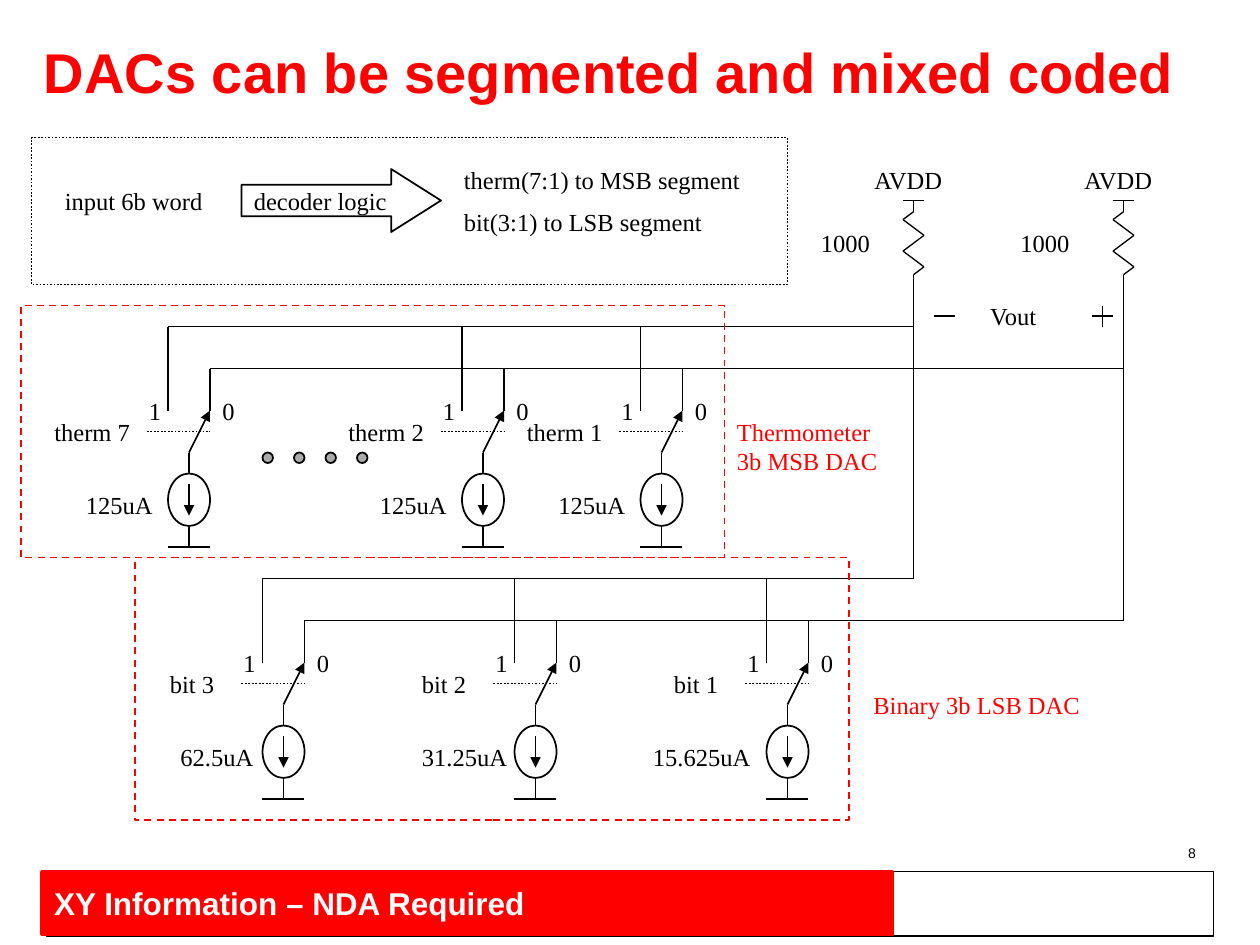
from itertools import pairwise

from lxml import etree
from pptx import Presentation
from pptx.dml.color import RGBColor
from pptx.enum.dml import MSO_LINE
from pptx.enum.shapes import MSO_CONNECTOR, MSO_SHAPE
from pptx.enum.text import MSO_ANCHOR, MSO_AUTO_SIZE, PP_ALIGN
from pptx.oxml.ns import qn
from pptx.util import Pt

STRAIGHT = MSO_CONNECTOR.STRAIGHT
RECT, OVAL, RIGHT_ARROW = MSO_SHAPE.RECTANGLE, MSO_SHAPE.OVAL, MSO_SHAPE.RIGHT_ARROW
LEFT, CENTER, RIGHT = PP_ALIGN.LEFT, PP_ALIGN.CENTER, PP_ALIGN.RIGHT
TOP, MIDDLE = MSO_ANCHOR.TOP, MSO_ANCHOR.MIDDLE
GROW, FIXED = MSO_AUTO_SIZE.SHAPE_TO_FIT_TEXT, MSO_AUTO_SIZE.NONE
DOTTED, DASHED = MSO_LINE.ROUND_DOT, MSO_LINE.DASH
BLACK = RGBColor(0, 0, 0)
WHITE = RGBColor(255, 255, 255)
RED = RGBColor(255, 0, 0)
GRAY = RGBColor(170, 170, 170)
SERIF, SANS = "Times New Roman", "Arial"

MINUS_RAIL, PLUS_RAIL = 522, 642
MSB_TOP, LSB_TOP = 186.6, 330.6
SUPPLY_TOP = 114.6


class Schematic:
    def __init__(self, slide):
        self.slide = slide

    def fill_text(self, frame, text, size, font, color, bold=False, align=LEFT):
        frame.word_wrap = True
        paragraph = frame.paragraphs[0]
        paragraph.alignment = align
        run = paragraph.add_run()
        run.text = text
        run.font.size = Pt(size)
        run.font.name = font
        run.font.bold = bold
        run.font.color.rgb = color
        return paragraph

    def text(self, left, top, width, height, text, size, font, color,
             bold=False, align=LEFT, anchor=TOP, fit=FIXED):
        box = self.slide.shapes.add_textbox(Pt(left), Pt(top), Pt(width), Pt(height))
        box.text_frame.auto_size = fit
        box.text_frame.vertical_anchor = anchor
        return self.fill_text(box.text_frame, text, size, font, color, bold, align)

    def label(self, left, top, width, text, color=BLACK, align=LEFT, height=24):
        self.text(left, top, width, height, text, 14, SERIF, color, align=align, fit=GROW)

    def shape(self, kind, left, top, width, height, fill=None, color=BLACK, weight=1, dash=None):
        shape = self.slide.shapes.add_shape(kind, Pt(left), Pt(top), Pt(width), Pt(height))
        shape.shadow.inherit = False
        if fill is None:
            shape.fill.background()
        else:
            shape.fill.solid()
            shape.fill.fore_color.rgb = fill
        shape.line.color.rgb = color
        shape.line.width = Pt(weight)
        if dash:
            shape.line.dash_style = dash
        return shape

    def wire(self, x1, y1, x2, y2, weight=1, dash=None, arrow=False):
        wire = self.slide.shapes.add_connector(STRAIGHT, Pt(x1), Pt(y1), Pt(x2), Pt(y2))
        wire.line.color.rgb = BLACK
        wire.line.width = Pt(weight)
        if dash:
            wire.line.dash_style = dash
        properties = wire.element.spPr
        if arrow:
            etree.SubElement(properties.find(qn("a:ln")), qn("a:tailEnd"), type="triangle")
        etree.SubElement(properties, qn("a:effectLst"))

    def buses(self, first_cell, top):
        self.wire(first_cell - 12, top, MINUS_RAIL, top)
        self.wire(first_cell + 12, top + 24, PLUS_RAIL, top + 24)

    def cell(self, x, top, name, name_offset, name_width, current, current_offset, current_width):
        contact, pivot, source, ground = top + 48, top + 72, top + 84, top + 126
        self.shape(OVAL, x - 12, source, 24, 30, WHITE)
        self.wire(x, source + 6, x, source + 24, arrow=True)
        self.wire(x, source + 30, x, ground)
        self.wire(x, pivot, x, source)
        self.wire(x, pivot, x + 12, contact, arrow=True)
        self.wire(x + 12, contact, x + 12, top + 24)
        self.wire(x - 12, contact, x - 12, top)
        self.wire(x - 12, ground, x + 12, ground)
        self.wire(x - 24, contact + 12, x + 12, contact + 12, dash=DOTTED)
        self.label(x - name_offset, contact, name_width, name)
        self.label(x - 30, top + 36, 42, "1")
        self.label(x + 12, top + 36, 42, "0")
        self.label(x - current_offset, top + 90, current_width, current)

    def supply(self, x, rail_end, value_left):
        resistor = SUPPLY_TOP + 6.4
        self.wire(x - 6, SUPPLY_TOP, x + 6, SUPPLY_TOP)
        self.wire(x, SUPPLY_TOP, x, resistor, 0.75)
        zigzag = [(0, 0), (-6, 4.5), (6, 13.5), (-6, 22.5), (6, 31.5), (0, 36)]
        for (dx1, dy1), (dx2, dy2) in pairwise(zigzag):
            self.wire(x + dx1, resistor + dy1, x + dx2, resistor + dy2, 0.75)
        self.wire(x, resistor + 36, x, rail_end, 0.75)
        self.label(x - 36, 90.6, 66, "AVDD", align=CENTER)
        self.label(value_left, 126.6, 54, "1000")


def main():
    deck = Presentation()
    deck.slide_width, deck.slide_height = Pt(720), Pt(540)
    schematic = Schematic(deck.slides.add_slide(deck.slide_layouts[6]))

    schematic.shape(RECT, 26.6, 498.2, 666.7, 36.7, weight=0.75)
    footer = schematic.shape(RECT, 23.8, 498.2, 486, 36, RED, RED, 2)
    footer.text_frame.vertical_anchor = MIDDLE
    schematic.fill_text(footer.text_frame, "XY Information – NDA Required", 18, SANS, WHITE, True)
    title = schematic.text(18, 11.5, 666, 64, "DACs can be segmented and mixed coded",
                           32, SANS, RED, bold=True, anchor=MIDDLE)
    title.line_spacing = 0.85
    schematic.text(522.7, 478.8, 167.8, 16.6, "8", 8, SANS, BLACK, align=RIGHT)

    schematic.buses(108, MSB_TOP)
    for x, name in [(108, "therm 7"), (276, "therm 2"), (378, "therm 1")]:
        schematic.cell(x, MSB_TOP, name, 84, 66, "125uA", 66, 66)
    for dot in range(4):
        schematic.shape(OVAL, 150 + 18 * dot, MSB_TOP + 72, 6, 6, GRAY)

    schematic.buses(162, LSB_TOP)
    for x, name, current, offset, width in [
        (162, "bit 3", "62.5uA", 66, 66),
        (306, "bit 2", "31.25uA", 72, 66),
        (450, "bit 1", "15.625uA", 84, 84),
    ]:
        schematic.cell(x, LSB_TOP, name, 72, 42, current, offset, width)

    schematic.supply(MINUS_RAIL, LSB_TOP, 462)
    schematic.supply(PLUS_RAIL, LSB_TOP + 24, 576)
    schematic.label(546, 168.6, 66, "Vout", align=CENTER)
    schematic.wire(630, 174.6, 630, 186.6)
    for sign_left in (624, 534):
        schematic.wire(sign_left, 180.6, sign_left + 12, 180.6)

    schematic.label(492, 390.6, 144, "Binary 3b LSB DAC", RED)
    schematic.label(414, 234.6, 102, "Thermometer 3b MSB DAC", RED, height=41)
    schematic.label(258, 90.6, 186, "therm(7:1) to MSB segment")
    schematic.label(258, 114.6, 192, "bit(3:1) to LSB segment")
    decoder = schematic.shape(RIGHT_ARROW, 138, 96.6, 114, 36)
    decoder.adjustments[1] = 0.79
    schematic.label(30, 102.6, 102, "input 6b word")
    schematic.label(138, 102.6, 102, "decoder logic")

    schematic.shape(RECT, 18, 78.6, 432, 84, dash=DOTTED)
    schematic.shape(RECT, 12, 174.6, 402, 144, color=RED, dash=DASHED)
    schematic.shape(RECT, 77, 318.6, 408, 150, color=RED, dash=DASHED)

    deck.save("out.pptx")


if __name__ == "__main__":
    main()
